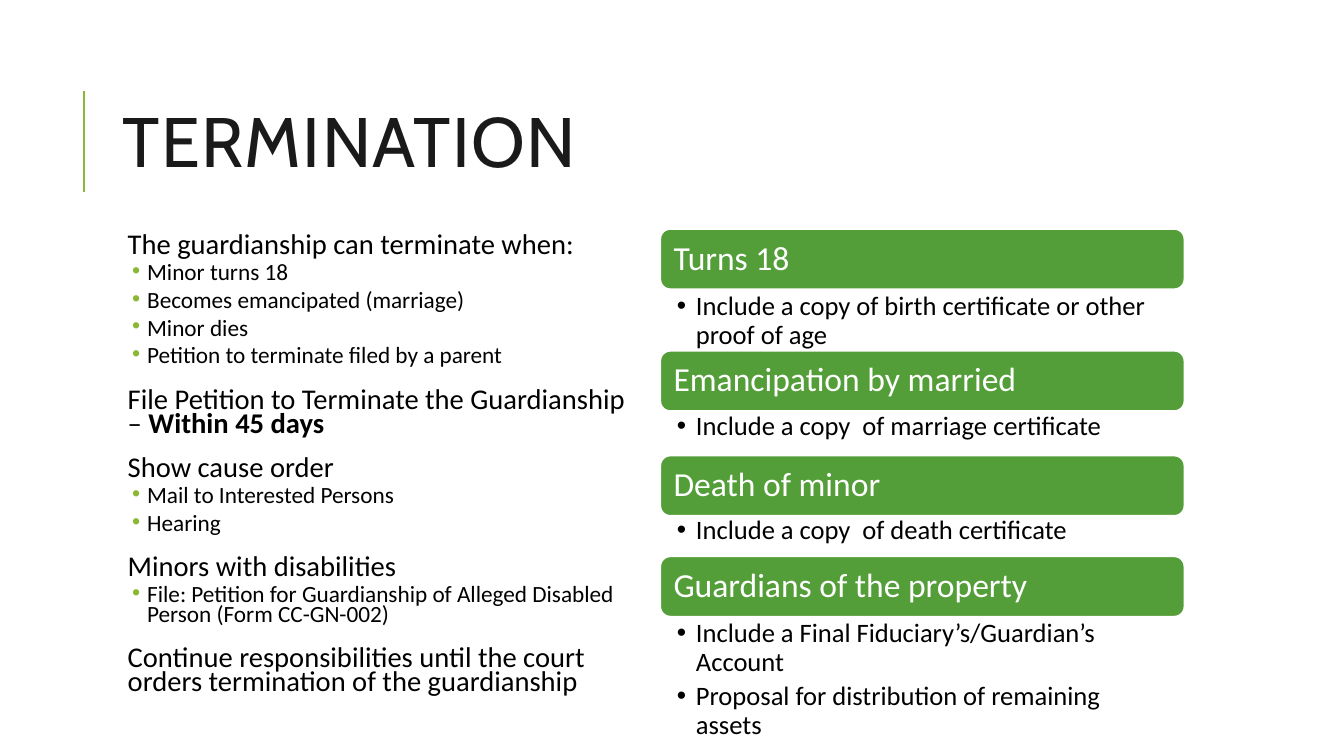
import pptx
import pptx.util
import pptx.dml.color
import pptx.enum.shapes
import pptx.enum.text
import pptx.oxml
import pptx.oxml.ns
from dataclasses import dataclass

Cm, Pt = pptx.util.Cm, pptx.util.Pt
RGBColor = pptx.dml.color.RGBColor
MSO_ANCHOR = pptx.enum.text.MSO_ANCHOR


@dataclass(frozen=True)
class Theme:
    title_font: str = "Cabin"
    body_font: str = "Calibri"
    ink: str = "1A1A1A"
    black: str = "000000"
    white: str = "FFFFFF"
    bar: str = "549E39"
    accent: str = "8AB833"
    title_size: float = 50
    bar_size: float = 24
    heading_size: float = 20.4
    detail_size: float = 19
    point_size: float = 16.6


theme = Theme()


def set_frame(frame, left, top, right, bottom, anchor=MSO_ANCHOR.TOP):
    values = dict(margin_left=Cm(left), margin_top=Cm(top), margin_right=Cm(right),
                  margin_bottom=Cm(bottom), vertical_anchor=anchor, word_wrap=True,
                  auto_size=pptx.enum.text.MSO_AUTO_SIZE.NONE)
    for name, value in values.items():
        setattr(frame, name, value)


def write(paragraph, runs, size, color, font=theme.body_font, spacing=0.9, before=0,
          after=0, margin=0, indent=0, bullet_color=None):
    """Fill a paragraph with (text, bold) runs; a bullet colour adds a bullet."""
    values = dict(alignment=pptx.enum.text.PP_ALIGN.LEFT, line_spacing=spacing,
                  space_before=Pt(before), space_after=Pt(after))
    for name, value in values.items():
        setattr(paragraph, name, value)
    properties = paragraph._p.get_or_add_pPr()
    properties.set("marL", str(Cm(margin)))
    properties.set("indent", str(Cm(indent)))
    if bullet_color:
        namespace = pptx.oxml.ns.nsdecls("a")
        for xml in (f'<a:buClr {namespace}><a:srgbClr val="{bullet_color}"/></a:buClr>',
                    f'<a:buFont {namespace} typeface="Arial"/>',
                    f'<a:buChar {namespace} char="•"/>'):
            properties.append(pptx.oxml.parse_xml(xml))
    for text, bold in runs:
        run = paragraph.add_run()
        run.text = text
        for name, value in dict(name=font, size=Pt(size), bold=bold).items():
            setattr(run.font, name, value)
        run.font.color.rgb = RGBColor.from_string(color)


presentation = pptx.Presentation()
presentation.slide_width, presentation.slide_height = Cm(33.87), Cm(19.05)
slide = presentation.slides.add_slide(presentation.slide_layouts[5])
shapes = slide.shapes

# Accent line beside the title
accent_line = shapes.add_connector(pptx.enum.shapes.MSO_CONNECTOR.STRAIGHT,
                                   Cm(2.11), Cm(4.83), Cm(2.11), Cm(2.29))
accent_line.line.color.rgb = RGBColor.from_string(theme.accent)
accent_line.line.width = Pt(1.5)
accent_line._element.spPr.append(
    pptx.oxml.parse_xml(f'<a:effectLst {pptx.oxml.ns.nsdecls("a")}/>'))

# Title
title = shapes.title
title_place = dict(left=Cm(2.84), top=Cm(1.63), width=Cm(27), height=Cm(4.17))
for name, value in title_place.items():
    setattr(title, name, value)
set_frame(title.text_frame, 0.25, 0.13, 0.25, 0.13, MSO_ANCHOR.MIDDLE)
title_paragraph = title.text_frame.paragraphs[0]
write(title_paragraph, [("TERMINATION", False)], theme.title_size, theme.ink,
      theme.title_font, spacing=0.8)
title_paragraph.runs[0].font._element.set("spc", "100")

# Left column: headings with their points
sections = [
    ([("The guardianship can terminate when:", False)],
     ["Minor turns 18", "Becomes emancipated (marriage)", "Minor dies",
      "Petition to terminate filed by a parent"]),
    ([("File Petition to Terminate the Guardianship – ", False),
      ("Within 45 days", True)], []),
    ([("Show cause order", False)], ["Mail to Interested Persons", "Hearing"]),
    ([("Minors with disabilities", False)],
     ["File: Petition for Guardianship of Alleged Disabled Person (Form CC-GN-002)"]),
    ([("Continue responsibilities until the court orders termination of the "
       "guardianship", False)], []),
]
heading_format = dict(size=theme.heading_size, color=theme.black, spacing=0.7,
                      before=12, after=2, margin=0.25)
point_format = dict(size=theme.point_size, color=theme.black, spacing=0.7, before=2,
                    after=4, margin=0.74, indent=-0.38, bullet_color=theme.accent)
overview = shapes.add_textbox(Cm(2.84), Cm(5.79), Cm(13.21), Cm(12.45)).text_frame
set_frame(overview, 0.13, 0.13, 0.13, 0.13)
paragraph = overview.paragraphs[0]
for index, (heading, points) in enumerate(sections):
    if index:
        paragraph = overview.add_paragraph()
    write(paragraph, heading, **heading_format)
    for point in points:
        paragraph = overview.add_paragraph()
        paragraph.level = 1
        write(paragraph, [(point, False)], **point_format)

# Right column: green bars, each with its details below
column_left, column_width, bar_height = Cm(16.64), Cm(13.21), Cm(1.52)
reasons = [
    (5.77, "Turns 18", 7.29, 1.47,
     ["Include a copy of birth certificate or other proof of age"]),
    (8.84, "Emancipation by married", 10.31, 1.09,
     ["Include a copy  of marriage certificate"]),
    (11.48, "Death of minor", 12.93, 1.09,
     ["Include a copy  of death certificate"]),
    (14.02, "Guardians of the property", 15.54, 2.34,
     ["Include a Final Fiduciary’s/Guardian’s Account",
      "Proposal for distribution of remaining assets"]),
]
for bar_top, reason, details_top, details_height, details in reasons:
    bar = shapes.add_shape(pptx.enum.shapes.MSO_SHAPE.ROUNDED_RECTANGLE,
                           column_left, Cm(bar_top), column_width, bar_height)
    bar.shadow.inherit = False
    bar.fill.solid()
    bar.fill.fore_color.rgb = RGBColor.from_string(theme.bar)
    bar.line.color.rgb = RGBColor.from_string(theme.white)
    bar.line.width = Pt(1.25)
    # The rounded corner already insets the text by 0.07 cm
    set_frame(bar.text_frame, 0.26, 0.25, 0.26, 0.25, MSO_ANCHOR.MIDDLE)
    write(bar.text_frame.paragraphs[0], [(reason, False)], theme.bar_size, theme.white)

    frame = shapes.add_textbox(column_left, Cm(details_top), column_width,
                               Cm(details_height)).text_frame
    set_frame(frame, 0.42, 0.08, 0.48, 0.08)
    for index, detail in enumerate(details):
        paragraph = frame.add_paragraph() if index else frame.paragraphs[0]
        paragraph.level = 1
        write(paragraph, [(detail, False)], theme.detail_size, theme.black, after=4,
              margin=0.48, indent=-0.48, bullet_color=theme.black)

presentation.save("out.pptx")
